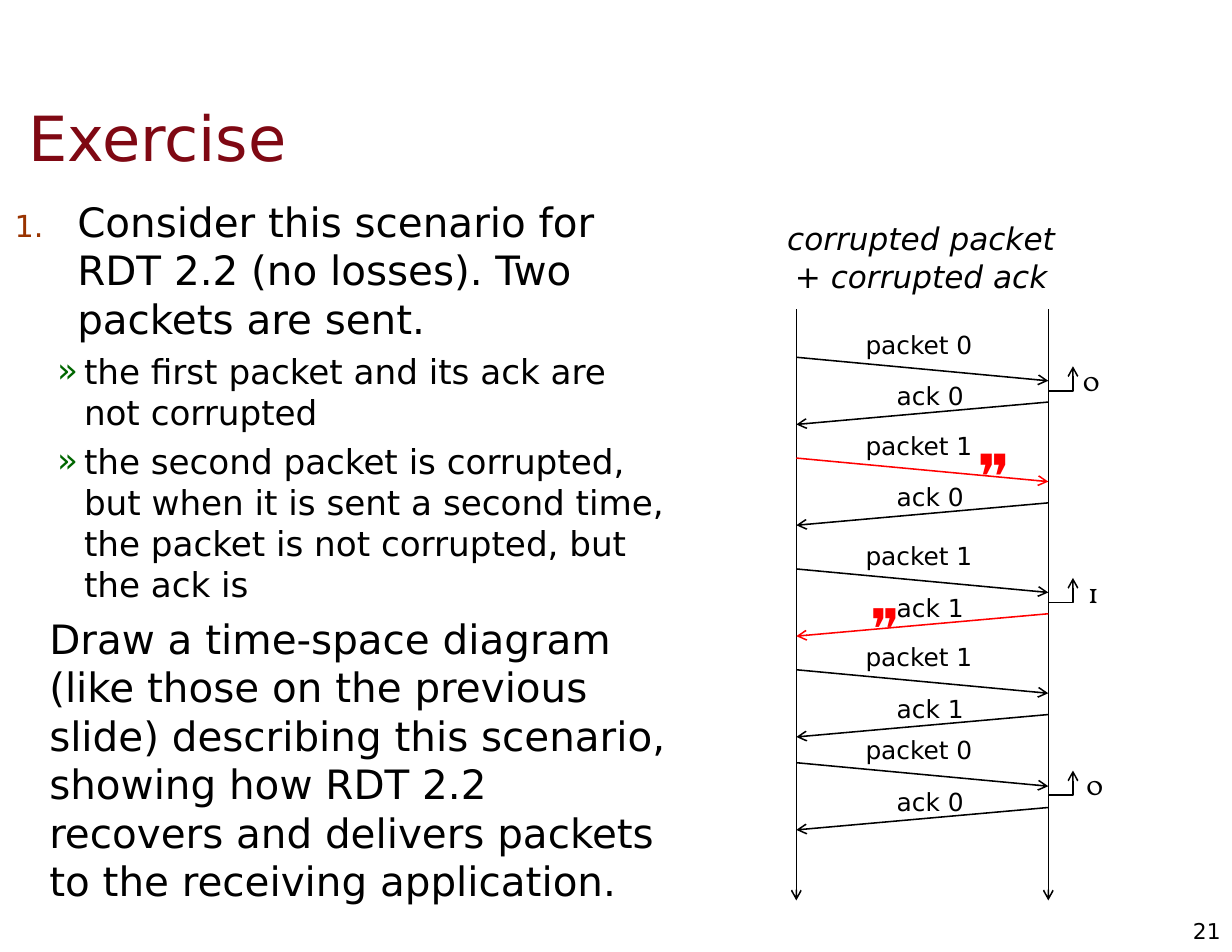
from lxml.etree import SubElement
from pptx import Presentation
from pptx.dml.color import RGBColor
from pptx.enum.shapes import MSO_CONNECTOR
from pptx.enum.text import MSO_ANCHOR, PP_ALIGN
from pptx.oxml.ns import qn
from pptx.util import Inches, Pt

FONT = "DejaVu Sans"
BLACK = "000000"
RED = "FF0000"


def add_text(left, top, width, height, text, size, font=FONT, color=BLACK,
             align=PP_ALIGN.CENTER, wrap=False):
    box = slide.shapes.add_textbox(Inches(left), Inches(top), Inches(width), Inches(height))
    frame = box.text_frame
    frame.margin_left = frame.margin_right = frame.margin_top = frame.margin_bottom = 0
    frame.vertical_anchor = MSO_ANCHOR.MIDDLE
    frame.word_wrap = wrap
    frame.text = text
    paragraph = frame.paragraphs[0]
    paragraph.alignment = align
    run_font = paragraph.runs[0].font
    run_font.name = font
    run_font.size = Pt(size)
    run_font.color.rgb = RGBColor.from_string(color)
    return run_font


def style_arrow(arrow, color=BLACK):
    arrow.line.color.rgb = RGBColor.from_string(color)
    arrow.line.width = Pt(1)
    properties = arrow.line._get_or_add_ln()
    SubElement(properties, qn("a:tailEnd"), type="arrow")
    SubElement(arrow._element.spPr, qn("a:effectLst"))


deck = Presentation()
deck.slide_width = Inches(11)
deck.slide_height = Inches(8.5)
slide = deck.slides.add_slide(deck.slide_layouts[5])

title = slide.shapes.title
title.left, title.top = Inches(0.15), Inches(0.7)
title.width, title.height = Inches(10.53), Inches(1.04)
title.text_frame.text = "Exercise"
title.text_frame.vertical_anchor = MSO_ANCHOR.MIDDLE
heading = title.text_frame.paragraphs[0]
heading.alignment = PP_ALIGN.LEFT
heading.runs[0].font.name = FONT
heading.runs[0].font.size = Pt(40)
heading.runs[0].font.color.rgb = RGBColor.from_string("7F0813")

question = slide.shapes.add_textbox(Inches(0.02), Inches(1.7), Inches(6.08), Inches(6.8)).text_frame
question.word_wrap = True
question.margin_left = question.margin_right = Inches(0.11)
question.margin_top = question.margin_bottom = Inches(0.06)
steps = [
    ("Consider this scenario for RDT 2.2 (no losses). Two packets are sent.",
     26, 0, 0.56, -0.56, "993300", 75, "number"),
    ("the first packet and its ack are not corrupted",
     22, 1, 0.62, -0.24, "006600", 100, "»"),
    ("the second packet is corrupted, but when it is sent a second time, "
     "the packet is not corrupted, but the ack is",
     22, 1, 0.62, -0.24, "006600", 100, "»"),
    ("Draw a time-space diagram (like those on the previous slide) describing this scenario, "
     "showing how RDT 2.2 recovers and delivers packets to the receiving application.",
     26, 0, 0.31, 0, None, 100, None),
]
for index, (text, size, level, margin, indent, mark_color, mark_size, mark) in enumerate(steps):
    step = question.add_paragraph() if index else question.paragraphs[0]
    step.text = text
    step.level = level
    properties = step._p.get_or_add_pPr()
    properties.set("marL", str(Inches(margin)))
    properties.set("indent", str(Inches(indent)))
    if mark:
        SubElement(SubElement(properties, qn("a:buClr")), qn("a:srgbClr"), val=mark_color)
        SubElement(properties, qn("a:buSzPct"), val=str(mark_size * 1000))
        SubElement(properties, qn("a:buFont"), typeface=FONT)
        if mark == "number":
            SubElement(properties, qn("a:buAutoNum"), type="arabicPeriod")
        else:
            SubElement(properties, qn("a:buChar"), char=mark)
    if index:
        step.space_before = Pt(6 if size == 26 else 5)
    run_font = step.runs[0].font
    run_font.name = FONT
    run_font.size = Pt(size)
    run_font.color.rgb = RGBColor.from_string(BLACK)

add_text(10.56, 8.19, 0.34, 0.24, "21", 14, align=PP_ALIGN.RIGHT)
caption = add_text(6.92, 1.96, 2.61, 0.67, "corrupted packet + corrupted ack", 20, wrap=True)
caption.italic = True

SENDER, RECEIVER = 7.11, 9.36
arrows = [(timeline, 2.76, timeline, 8.04, BLACK) for timeline in (SENDER, RECEIVER)]
exchanges = [
    (3.19, 0, 0, BLACK, BLACK),
    (4.09, 1, 0, RED, BLACK),
    (5.08, 1, 1, BLACK, RED),
    (5.98, 1, 1, BLACK, BLACK),
    (6.81, 0, 0, BLACK, BLACK),
]
for sent, packet, ack, packet_color, ack_color in exchanges:
    arrows.append((SENDER, sent, RECEIVER, sent + 0.21, packet_color))
    arrows.append((RECEIVER, sent + 0.4, SENDER, sent + 0.6, ack_color))
    add_text(7.72, sent - 0.25, 0.97, 0.27, f"packet {packet}", 16)
    add_text(8, sent + 0.21, 0.61, 0.27, f"ack {ack}", 16)
for x1, y1, x2, y2, color in arrows:
    arrow = slide.shapes.add_connector(
        MSO_CONNECTOR.STRAIGHT, Inches(x1), Inches(y1), Inches(x2), Inches(y2))
    style_arrow(arrow, color)

add_text(8.71, 3.9, 0.33, 0.67, "❞", 40, "Arial", RED)
add_text(7.76, 5.29, 0.29, 0.61, "❞", 36, "Arial", RED)

for delivered, left, bit in [(3.49, 9.67, "0"), (5.38, 9.68, "1"), (7.1, 9.7, "0")]:
    outline = slide.shapes.build_freeform(Inches(RECEIVER), Inches(delivered))
    outline.add_line_segments(
        [(Inches(9.58), Inches(delivered)), (Inches(9.58), Inches(delivered - 0.22))], close=False)
    delivery = outline.convert_to_shape()
    delivery.fill.background()
    style_arrow(delivery)
    add_text(left, delivered - 0.25, 0.13, 0.31, bit, 18, "Vollkorn", align=PP_ALIGN.RIGHT)

deck.save("out.pptx")
